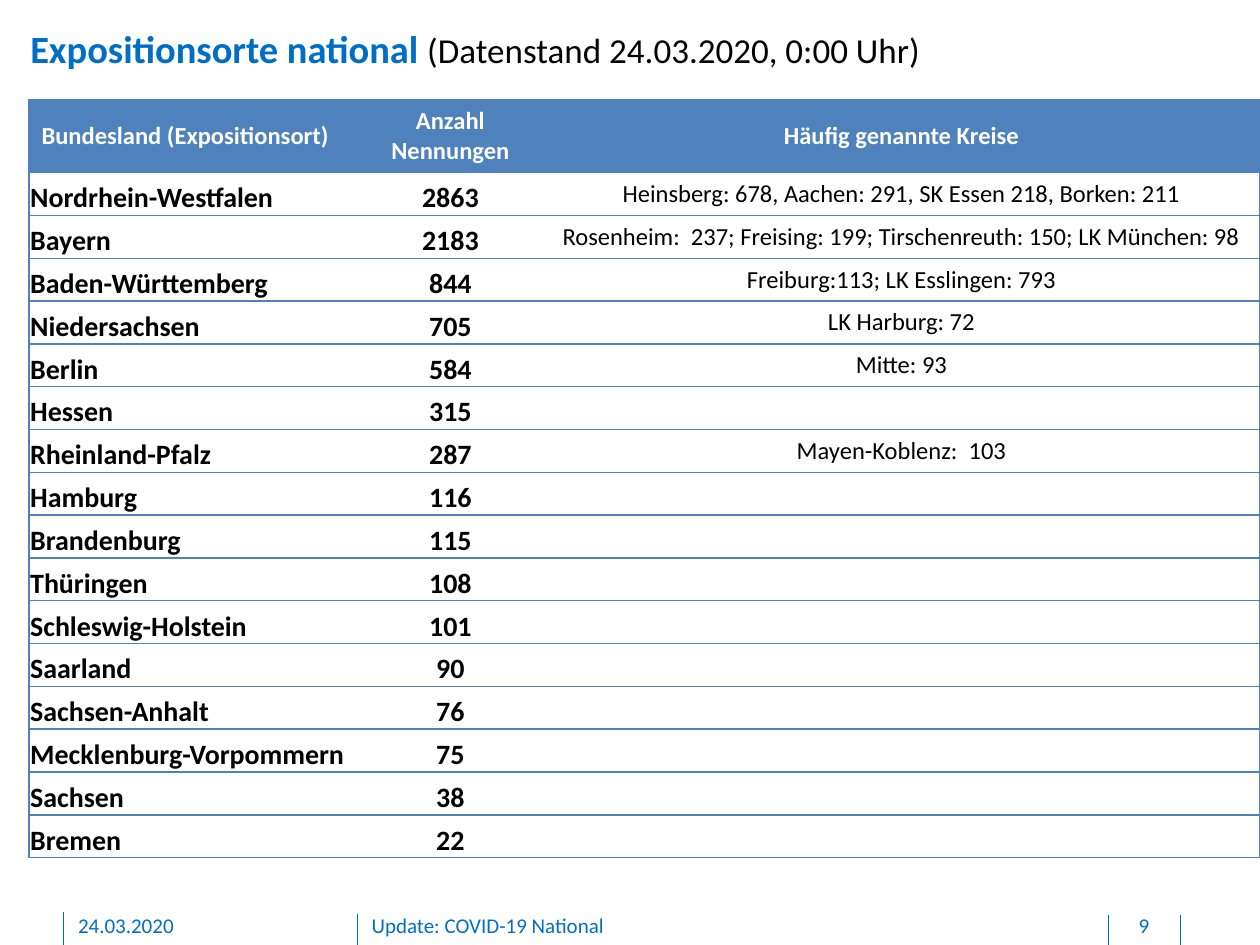
from typing import NamedTuple

from lxml import etree
from pptx import Presentation
from pptx.dml.color import RGBColor
from pptx.enum.shapes import MSO_CONNECTOR
from pptx.enum.text import MSO_ANCHOR, MSO_AUTO_SIZE, PP_ALIGN
from pptx.oxml.ns import qn
from pptx.util import Inches, Pt

STRAIGHT = MSO_CONNECTOR.STRAIGHT
TOP, MIDDLE, BOTTOM = MSO_ANCHOR.TOP, MSO_ANCHOR.MIDDLE, MSO_ANCHOR.BOTTOM
LEFT, CENTER = PP_ALIGN.LEFT, PP_ALIGN.CENTER
NO_AUTOFIT = MSO_AUTO_SIZE.NONE

BLUE = RGBColor(0x00, 0x6E, 0xC7)
TABLE_BLUE = RGBColor(0x4F, 0x81, 0xBD)
BLACK = RGBColor(0, 0, 0)
WHITE = RGBColor(0xFF, 0xFF, 0xFF)
FONT = "Calibri"


class Region(NamedTuple):
    state: str
    mentions: int
    districts: str = ""


class FooterText(NamedTuple):
    text: str
    left: float
    width: float
    align: PP_ALIGN


class Divider(NamedTuple):
    x: float
    top: float


class CellStyle(NamedTuple):
    size: int
    bold: bool
    color: RGBColor
    fill: RGBColor
    align: PP_ALIGN
    anchor: MSO_ANCHOR
    margins: tuple[float, float, float, float]


HEADERS = ("Bundesland (Expositionsort)", "Anzahl Nennungen", "Häufig genannte Kreise")
REGIONS = (
    Region("Nordrhein-Westfalen", 2863, "Heinsberg: 678, Aachen: 291, SK Essen 218, Borken: 211"),
    Region("Bayern", 2183, "Rosenheim:  237; Freising: 199; Tirschenreuth: 150; LK München: 98"),
    Region("Baden-Württemberg", 844, "Freiburg:113; LK Esslingen: 793"),
    Region("Niedersachsen", 705, "LK Harburg: 72"),
    Region("Berlin", 584, "Mitte: 93"),
    Region("Hessen", 315),
    Region("Rheinland-Pfalz", 287, "Mayen-Koblenz:  103"),
    Region("Hamburg", 116),
    Region("Brandenburg", 115),
    Region("Thüringen", 108),
    Region("Schleswig-Holstein", 101),
    Region("Saarland", 90),
    Region("Sachsen-Anhalt", 76),
    Region("Mecklenburg-Vorpommern", 75),
    Region("Sachsen", 38),
    Region("Bremen", 22),
)
COLUMN_WIDTHS = (2.61, 1.47, 5.69)
HEADER_HEIGHT, ROW_HEIGHT = 0.58, 0.34

HEADER_MARGINS = (0.1, 0.05, 0.1, 0.05)
TIGHT_MARGINS = (0.01, 0.01, 0.01, 0)
DISTRICT_MARGINS = (0.1, 0, 0.1, 0)
HEADER_STYLES = tuple(
    CellStyle(14, True, WHITE, TABLE_BLUE, align, MIDDLE, HEADER_MARGINS)
    for align in (LEFT, CENTER, CENTER)
)
REGION_STYLES = (
    CellStyle(16, True, BLACK, WHITE, LEFT, BOTTOM, TIGHT_MARGINS),
    CellStyle(16, True, BLACK, WHITE, CENTER, BOTTOM, TIGHT_MARGINS),
    CellStyle(14, False, BLACK, WHITE, CENTER, MIDDLE, DISTRICT_MARGINS),
)

DIVIDERS = (Divider(0.5, 7.24), Divider(2.84, 7.25), Divider(8.8, 7.26), Divider(9.37, 7.26))
FOOTER_TEXTS = (
    FooterText("24.03.2020", 0.62, 2.03, LEFT),
    FooterText("Update: COVID-19 National", 2.95, 5.67, LEFT),
    FooterText("9", 8.81, 0.54, CENTER),
)


def set_margins(target, margins: tuple[float, float, float, float]) -> None:
    target.margin_left, target.margin_top, target.margin_right, target.margin_bottom = (
        Inches(margin) for margin in margins
    )


def format_font(font, size: int, color: RGBColor, bold: bool = False) -> None:
    font.name = FONT
    font.size = Pt(size)
    font.bold = bold
    font.color.rgb = color


def draw_title(slide) -> None:
    title = slide.shapes.title
    title.left, title.top = Inches(0.24), Inches(0.2)
    title.width, title.height = Inches(8.85), Inches(0.37)
    frame = title.text_frame
    frame.auto_size = NO_AUTOFIT
    frame.word_wrap = True
    frame.vertical_anchor = MIDDLE
    set_margins(frame, (0, 0, 0, 0))
    heading = frame.paragraphs[0]
    heading.alignment = LEFT
    for text, size, color, bold in (
        ("Expositionsorte national ", 22, BLUE, True),
        ("(Datenstand 24.03.2020, 0:00 Uhr)", 20, BLACK, False),
    ):
        part = heading.add_run()
        part.text = text
        format_font(part.font, size, color, bold)


def draw_divider(slide, divider: Divider) -> None:
    x = Inches(divider.x)
    line = slide.shapes.add_connector(STRAIGHT, x, Inches(divider.top), x, Inches(7.5))
    line.line.color.rgb = BLUE
    line.line.width = Pt(0.5)
    etree.SubElement(line._element.spPr, qn("a:effectLst"))


def draw_footer_text(slide, footer: FooterText) -> None:
    box = slide.shapes.add_textbox(
        Inches(footer.left), Inches(7.24), Inches(footer.width), Inches(0.21)
    )
    frame = box.text_frame
    frame.word_wrap = True
    frame.vertical_anchor = TOP
    set_margins(frame, (0, 0, 0, 0.05))
    paragraph = frame.paragraphs[0]
    paragraph.text = footer.text
    paragraph.alignment = footer.align
    format_font(paragraph.font, 12, BLUE)


def set_borders(cell, visible_sides: str) -> None:
    properties = cell._tc.get_or_add_tcPr()
    for side in "LRTB":
        border = etree.SubElement(properties, qn(f"a:ln{side}"), w=str(Pt(1)))
        if side in visible_sides:
            fill = etree.SubElement(border, qn("a:solidFill"))
            etree.SubElement(fill, qn("a:srgbClr"), val=str(TABLE_BLUE))
        else:
            etree.SubElement(border, qn("a:noFill"))


def fill_cell(cell, text: str, style: CellStyle, visible_sides: str) -> None:
    set_borders(cell, visible_sides)
    cell.fill.solid()
    cell.fill.fore_color.rgb = style.fill
    cell.vertical_anchor = style.anchor
    set_margins(cell, style.margins)
    paragraph = cell.text_frame.paragraphs[0]
    paragraph.text = text
    paragraph.alignment = style.align
    format_font(paragraph.font, style.size, style.color, style.bold)


def draw_region_table(slide) -> None:
    rows = (HEADERS, *REGIONS)
    height = HEADER_HEIGHT + ROW_HEIGHT * len(REGIONS)
    table = slide.shapes.add_table(
        len(rows), len(HEADERS), Inches(0.23), Inches(0.79),
        Inches(sum(COLUMN_WIDTHS)), Inches(height),
    ).table
    for column, width in zip(table.columns, COLUMN_WIDTHS):
        column.width = Inches(width)
    for row_index, values in enumerate(rows):
        is_header = row_index == 0
        table.rows[row_index].height = Inches(HEADER_HEIGHT if is_header else ROW_HEIGHT)
        styles = HEADER_STYLES if is_header else REGION_STYLES
        for column_index, (value, style, sides) in enumerate(zip(values, styles, ("LTB", "TB", "RTB"))):
            fill_cell(table.cell(row_index, column_index), str(value), style, sides)


def main() -> None:
    presentation = Presentation()
    presentation.slide_width, presentation.slide_height = Inches(10), Inches(7.5)
    slide = presentation.slides.add_slide(presentation.slide_layouts[5])
    for divider in DIVIDERS:
        draw_divider(slide, divider)
    draw_title(slide)
    for footer in FOOTER_TEXTS:
        draw_footer_text(slide, footer)
    draw_region_table(slide)
    presentation.save("out.pptx")


if __name__ == "__main__":
    main()
